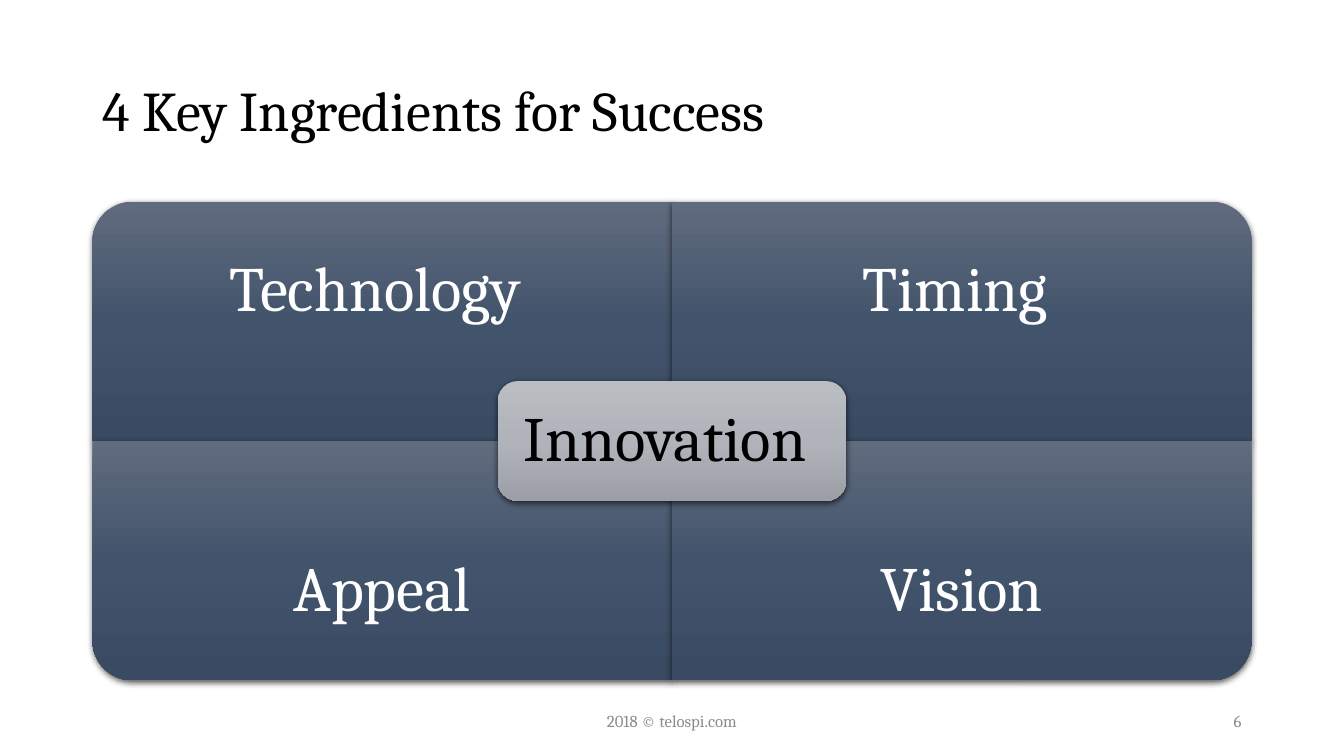
from dataclasses import dataclass

from lxml.etree import SubElement
from pptx import Presentation
from pptx.dml.color import RGBColor
from pptx.enum.shapes import MSO_SHAPE
from pptx.enum.text import MSO_ANCHOR, MSO_AUTO_SIZE, PP_ALIGN
from pptx.oxml import parse_xml
from pptx.oxml.ns import nsdecls, qn
from pptx.util import Pt

SCALE = 9525


@dataclass(frozen=True)
class Theme:
    font: str = "Cambria"
    dark: str = "000000"
    light: str = "FFFFFF"
    muted: str = "8C8C8C"
    quadrant: tuple = ("606B7D", "42546C", "394A62")
    centre: tuple = ("BABDC2", "B0B3BA", "9C9FA6")
    title_size: int = 40
    label_size: int = 45
    footer_size: int = 12


THEME = Theme()
GRID_LEFT, GRID_TOP = 88, 192
CELL_WIDTH, CELL_HEIGHT = 552, 228
LABEL_HEIGHT = 171
QUADRANTS = (
    ("Technology ", 0, 0, 270),
    ("Timing ", 1, 0, 0),
    ("Appeal", 0, 1, 180),
    ("Vision", 1, 1, 90),
)


def px(value):
    return int(value * SCALE)


def apply(target, values):
    for name, value in values.items():
        setattr(target, name, value)


def place(shape, left, top, width, height):
    apply(shape, {"left": px(left), "top": px(top),
                  "width": px(width), "height": px(height)})


def write(shape, text, size, color, align, spacing=1.0, inset=None):
    frame = shape.text_frame
    apply(frame, {"word_wrap": True, "auto_size": MSO_AUTO_SIZE.NONE,
                  "vertical_anchor": MSO_ANCHOR.MIDDLE})
    if inset is not None:
        sides = ("left", "top", "right", "bottom")
        apply(frame, {f"margin_{side}": px(inset) for side in sides})
    para = frame.paragraphs[0]
    apply(para, {"alignment": align, "line_spacing": spacing})
    span = para.add_run()
    span.text = text
    apply(span.font, {"name": THEME.font, "size": Pt(size)})
    span.font.color.rgb = RGBColor.from_string(color)


def add_text(page, area, text, size, color, align, **layout):
    box = page.shapes.add_textbox(*map(px, area))
    write(box, text, size, color, align, **layout)


def add_label(page, area, text, color, inset):
    add_text(page, area, text, THEME.label_size, color, PP_ALIGN.CENTER,
             spacing=0.9, inset=inset)


def add_panel(page, kind, area, colors, turn=0):
    left, top, width, height = area
    if turn % 180:
        left += (width - height) / 2
        top += (height - width) / 2
        width, height = height, width
    panel = page.shapes.add_shape(kind, *map(px, (left, top, width, height)))
    panel.rotation = turn
    panel.line.fill.background()
    panel.fill.gradient()
    gradient = panel.fill._xPr.find(qn("a:gradFill"))
    gradient.set("rotWithShape", "0")
    gradient.find(qn("a:lin")).set("ang", "5400000")
    stops = gradient.find(qn("a:gsLst"))
    for stop in list(stops):
        stops.remove(stop)
    for position, color in zip((0, 50000, 100000), colors):
        stop = SubElement(stops, qn("a:gs"), pos=str(position))
        SubElement(stop, qn("a:srgbClr"), val=color)
    panel._element.spPr.append(parse_xml(
        f'<a:effectLst {nsdecls("a")}>'
        f'<a:outerShdw blurRad="{Pt(4.5)}" dist="{Pt(1.5)}" dir="5400000" '
        'algn="ctr" rotWithShape="0"><a:srgbClr val="000000">'
        '<a:alpha val="63000"/></a:srgbClr></a:outerShdw></a:effectLst>'))


def add_quadrant(page, text, column, row, turn):
    left = GRID_LEFT + column * CELL_WIDTH
    top = GRID_TOP + row * CELL_HEIGHT
    add_panel(page, MSO_SHAPE.ROUND_1_RECTANGLE,
              (left, top, CELL_WIDTH, CELL_HEIGHT), THEME.quadrant, turn)
    label_top = top + row * (CELL_HEIGHT - LABEL_HEIGHT)
    add_label(page, (left, label_top, CELL_WIDTH, LABEL_HEIGHT),
              text, THEME.light, 34)


def main():
    deck = Presentation()
    apply(deck, {"slide_width": px(1280), "slide_height": px(720)})
    page = deck.slides.add_slide(deck.slide_layouts[5])
    title = page.shapes.title
    place(title, 88, 38, 1104, 139)
    write(title, "4 Key Ingredients for Success", THEME.title_size,
          THEME.dark, PP_ALIGN.LEFT, spacing=0.9)
    for quadrant in QUADRANTS:
        add_quadrant(page, *quadrant)
    add_panel(page, MSO_SHAPE.ROUNDED_RECTANGLE, (474, 363, 332, 114),
              THEME.centre)
    add_label(page, (480, 369, 320, 102), "Innovation ", THEME.dark, 18)
    add_text(page, (424, 667, 432, 38), "2018 © telospi.com",
             THEME.footer_size, THEME.muted, PP_ALIGN.CENTER)
    add_text(page, (904, 667, 288, 38), "6",
             THEME.footer_size, THEME.muted, PP_ALIGN.RIGHT)
    deck.save("out.pptx")


if __name__ == "__main__":
    main()
